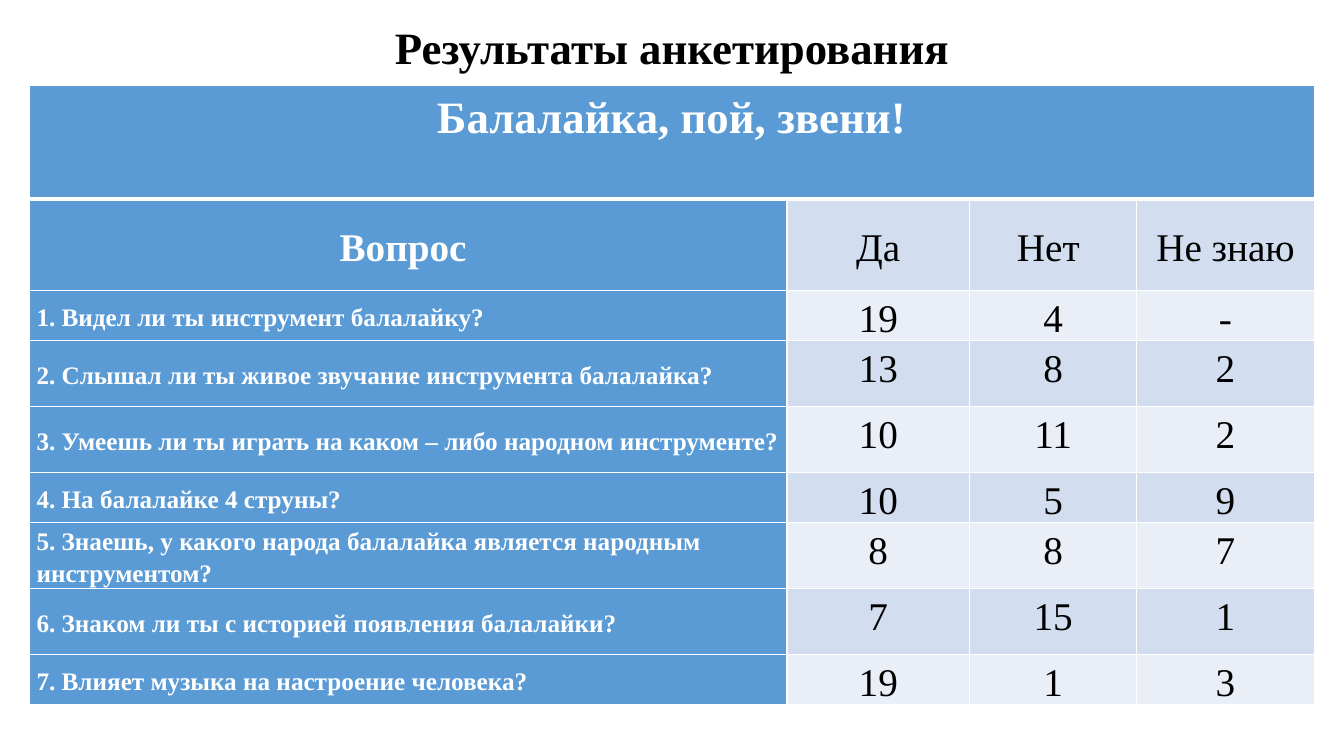
from lxml.etree import SubElement
from pptx import Presentation
from pptx.dml.color import RGBColor
from pptx.enum.text import MSO_ANCHOR as Anchor, PP_ALIGN as Align
from pptx.oxml.ns import qn
from pptx.util import Pt

FONT = "Times New Roman"
BLUE, PALE, PALER = "5B9BD5", "D2DEEF", "EAEFF7"
WHITE, BLACK = "FFFFFF", "000000"

COLUMN_WIDTHS = [541.4, 130.5, 119.4, 126.8]
BANNER_HEIGHT, HEADER_HEIGHT = 81, 65.4
SHORT, TALL = 35.4, 47.2

HEADER = ["Вопрос ", "Да", "Нет ", "Не знаю"]
ANSWERS = [
    (SHORT, "1. Видел ли ты инструмент балалайку?", "19", "4", "-"),
    (TALL, "2. Слышал ли ты живое звучание инструмента балалайка?", "13", "8", "2"),
    (TALL, "3. Умеешь ли ты играть на каком – либо народном инструменте?", "10", "11", "2"),
    (SHORT, "4. На балалайке 4 струны?", "10", "5", "9"),
    (TALL, "5. Знаешь, у какого народа балалайка является народным инструментом?", "8", "8", "7"),
    (TALL, "6. Знаком ли ты с историей появления балалайки?", "7", "15", "1"),
    (SHORT, "7. Влияет музыка на настроение человека?", "19", "1", "3"),
]


def color(value):
    return RGBColor.from_string(value)


def write(frame, text, size, ink, bold, align, spacing, after=0):
    frame.text = text
    paragraph = frame.paragraphs[0]
    paragraph.alignment = align
    paragraph.line_spacing = spacing
    paragraph.space_before = Pt(0)
    paragraph.space_after = Pt(after)
    for run in paragraph.runs:
        run.font.name = FONT
        run.font.size = Pt(size)
        run.font.bold = bold
        run.font.color.rgb = color(ink)


def set_borders(cell, top=1, bottom=1):
    properties = cell._tc.get_or_add_tcPr()
    widths = {"a:lnL": 1, "a:lnR": 1, "a:lnT": top, "a:lnB": bottom}
    for position, (side, width) in enumerate(widths.items()):
        line = SubElement(properties, qn(side), w=str(Pt(width)))
        fill = SubElement(line, qn("a:solidFill"))
        SubElement(fill, qn("a:srgbClr"), val=WHITE)
        properties.insert(position, line)


def fill_cell(cell, text, size, background, anchor=Anchor.MIDDLE, align=Align.CENTER,
              top=1, bottom=1):
    on_blue = background == BLUE
    write(cell.text_frame, text, size, WHITE if on_blue else BLACK, on_blue, align, 1.15, 10)
    cell.vertical_anchor = anchor
    cell.margin_left = cell.margin_right = Pt(5.4)
    cell.margin_top = cell.margin_bottom = Pt(0)
    cell.fill.solid()
    cell.fill.fore_color.rgb = color(background)
    set_borders(cell, top, bottom)


def add_title(slide, text):
    title = slide.shapes.title
    title.left, title.top, title.width, title.height = Pt(66), Pt(19.5), Pt(828), Pt(32.4)
    write(title.text_frame, text, 32, BLACK, True, Align.CENTER, 0.9)
    title.text_frame.vertical_anchor = Anchor.MIDDLE


def add_survey(slide):
    heights = [BANNER_HEIGHT, HEADER_HEIGHT] + [answer[0] for answer in ANSWERS]
    survey = slide.shapes.add_table(
        len(heights), len(COLUMN_WIDTHS), Pt(20.7), Pt(61.3),
        Pt(sum(COLUMN_WIDTHS)), Pt(sum(heights))).table
    for column, width in zip(survey.columns, COLUMN_WIDTHS):
        column.width = Pt(width)
    for row, height in zip(survey.rows, heights):
        row.height = Pt(height)

    survey.cell(0, 0).merge(survey.cell(0, len(COLUMN_WIDTHS) - 1))
    for column in range(len(COLUMN_WIDTHS)):
        banner = "" if column else "Балалайка, пой, звени!"
        fill_cell(survey.cell(0, column), banner, 32, BLUE, Anchor.TOP, bottom=3)
    for column, heading in enumerate(HEADER):
        fill_cell(survey.cell(1, column), heading, 28, PALE if column else BLUE, top=3)

    for row, (_, question, *counts) in enumerate(ANSWERS, start=2):
        fill_cell(survey.cell(row, 0), question, 18, BLUE, align=Align.LEFT)
        for column, count in enumerate(counts, start=1):
            fill_cell(survey.cell(row, column), count, 28, PALE if row % 2 else PALER, Anchor.TOP)


def main():
    deck = Presentation()
    deck.slide_width, deck.slide_height = Pt(960), Pt(540)
    slide = deck.slides.add_slide(deck.slide_layouts[5])
    add_title(slide, "Результаты анкетирования")
    add_survey(slide)
    deck.save("out.pptx")


if __name__ == "__main__":
    main()
